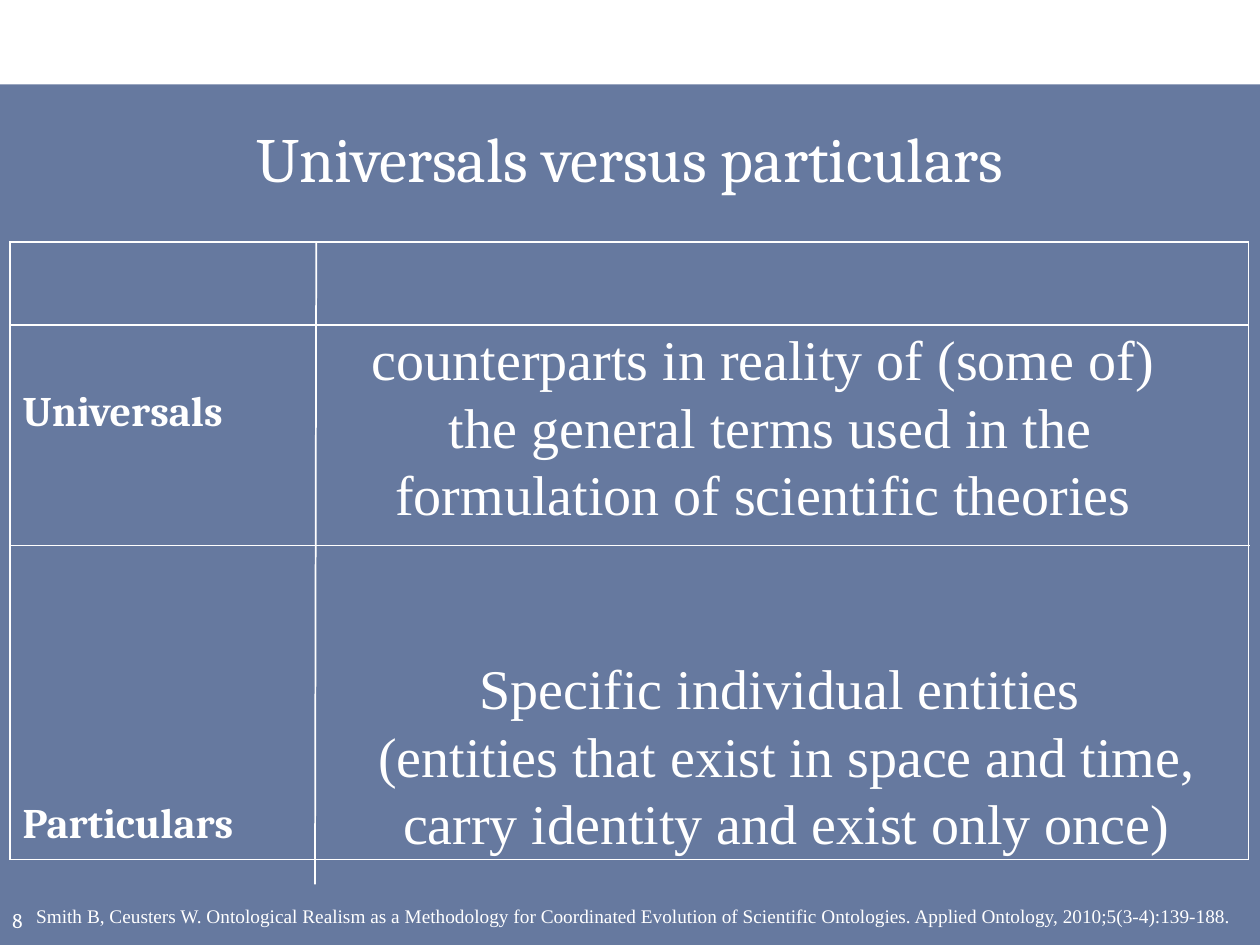
from lxml.etree import SubElement
from pptx import Presentation
from pptx.dml.color import RGBColor
from pptx.enum.shapes import MSO_CONNECTOR, MSO_SHAPE
from pptx.enum.text import MSO_ANCHOR, PP_ALIGN
from pptx.oxml.ns import qn
from pptx.util import Inches, Pt

WHITE = "FFFFFF"
NAVY = "002060"
HEADING_FONT = "Cambria"
BODY_FONT = "Times New Roman"


def paint(color_format, color):
    color_format.rgb = RGBColor.from_string(color)


def style_font(font, name, size, bold=False):
    font.name = name
    font.size = Pt(size)
    font.bold = bold
    paint(font.color, WHITE)


def add_backdrop(slide):
    backdrop = slide.shapes.add_shape(
        MSO_SHAPE.RECTANGLE, 0, Inches(0.67), Inches(10), Inches(6.83))
    backdrop.shadow.inherit = False
    backdrop.line.fill.background()
    backdrop.fill.solid()
    paint(backdrop.fill.fore_color, NAVY)
    navy = backdrop.fill._xPr.find(".//" + qn("a:srgbClr"))
    SubElement(navy, qn("a:alpha"), val="60000")


def add_rule(slide, start, end, width=1):
    rule = slide.shapes.add_connector(
        MSO_CONNECTOR.STRAIGHT, *map(Inches, start + end))
    paint(rule.line.color, WHITE)
    rule.line.width = Pt(width)
    SubElement(rule._element.spPr, qn("a:effectLst"))


def add_text(slide, box, lines, font, size,
             align=PP_ALIGN.LEFT, anchor=MSO_ANCHOR.TOP):
    frame = slide.shapes.add_textbox(*map(Inches, box)).text_frame
    frame.word_wrap = True
    frame.vertical_anchor = anchor
    frame.text = "\n".join(lines)
    for paragraph in frame.paragraphs:
        paragraph.alignment = align
        for run in paragraph.runs:
            style_font(run.font, font, size)


def set_borders(cell, visible_sides):
    """Draw the named sides (of L, R, T, B) in white and clear the others."""
    properties = cell._tc.get_or_add_tcPr()
    for side in "LRTB":
        border = SubElement(properties, qn(f"a:ln{side}"), w=str(Pt(1)))
        if side in visible_sides:
            fill = SubElement(border, qn("a:solidFill"))
            SubElement(fill, qn("a:srgbClr"), val=WHITE)
        else:
            SubElement(border, qn("a:noFill"))


def add_term_table(slide):
    column_widths = [2.42, 3.62, 3.79]
    row_heights = [0.66, 1.75, 2.49]
    table = slide.shapes.add_table(
        len(row_heights), len(column_widths), Inches(0.08), Inches(1.92),
        Inches(sum(column_widths)), Inches(sum(row_heights))).table
    table.first_row = table.horz_banding = False
    for column, width in zip(table.columns, column_widths):
        column.width = Inches(width)
    for row, height in zip(table.rows, row_heights):
        row.height = Inches(height)

    row_sides = ["T", "", "B"]
    column_sides = ["L", "", "R"]
    for r, row_side in enumerate(row_sides):
        for c, column_side in enumerate(column_sides):
            cell = table.cell(r, c)
            set_borders(cell, row_side + column_side)
            cell.fill.background()

    terms = [("Universals", MSO_ANCHOR.MIDDLE, 0.4),
             ("Particulars", MSO_ANCHOR.BOTTOM, 0.08)]
    for r, (term, anchor, bottom_margin) in enumerate(terms, start=1):
        cell = table.cell(r, 0)
        cell.text_frame.text = term
        cell.vertical_anchor = anchor
        cell.margin_bottom = Inches(bottom_margin)
        style_font(cell.text_frame.paragraphs[0].runs[0].font,
                   HEADING_FONT, 24, bold=True)


def main():
    presentation = Presentation()
    presentation.slide_width = Inches(10)
    presentation.slide_height = Inches(7.5)
    slide = presentation.slides.add_slide(presentation.slide_layouts[6])

    add_backdrop(slide)
    add_rule(slide, (9.92, 4.33), (0.09, 4.33), width=0.75)
    add_text(slide, (0.25, 0.83, 9.5, 0.83), ["Universals versus particulars"],
             HEADING_FONT, 36, PP_ALIGN.CENTER, MSO_ANCHOR.MIDDLE)
    add_term_table(slide)
    add_rule(slide, (9.91, 2.58), (0.08, 2.58))
    add_rule(slide, (2.51, 1.92), (2.5, 7.02))

    definitions = [
        ((2.41, 2.53, 7.41, 1.72),
         ["counterparts in reality of (some of) ",
          "the general terms used in the formulation of scientific theories "]),
        ((2.58, 5.14, 7.33, 1.72),
         ["Specific individual entities ",
          "(entities that exist in space and time, "
          "carry identity and exist only once)"]),
    ]
    for box, lines in definitions:
        add_text(slide, box, lines, BODY_FONT, 32, PP_ALIGN.CENTER)

    citation = ("Smith B, Ceusters W. Ontological Realism as a Methodology for "
                "Coordinated Evolution of Scientific Ontologies. "
                "Applied Ontology, 2010;5(3-4):139-188. ")
    add_text(slide, (0.09, 7.13, 9.82, 0.29), [citation],
             BODY_FONT, 11, PP_ALIGN.RIGHT)
    add_text(slide, (0, 7.1, 0.5, 0.4), ["8"], HEADING_FONT, 12,
             anchor=MSO_ANCHOR.MIDDLE)

    presentation.save("out.pptx")


if __name__ == "__main__":
    main()
